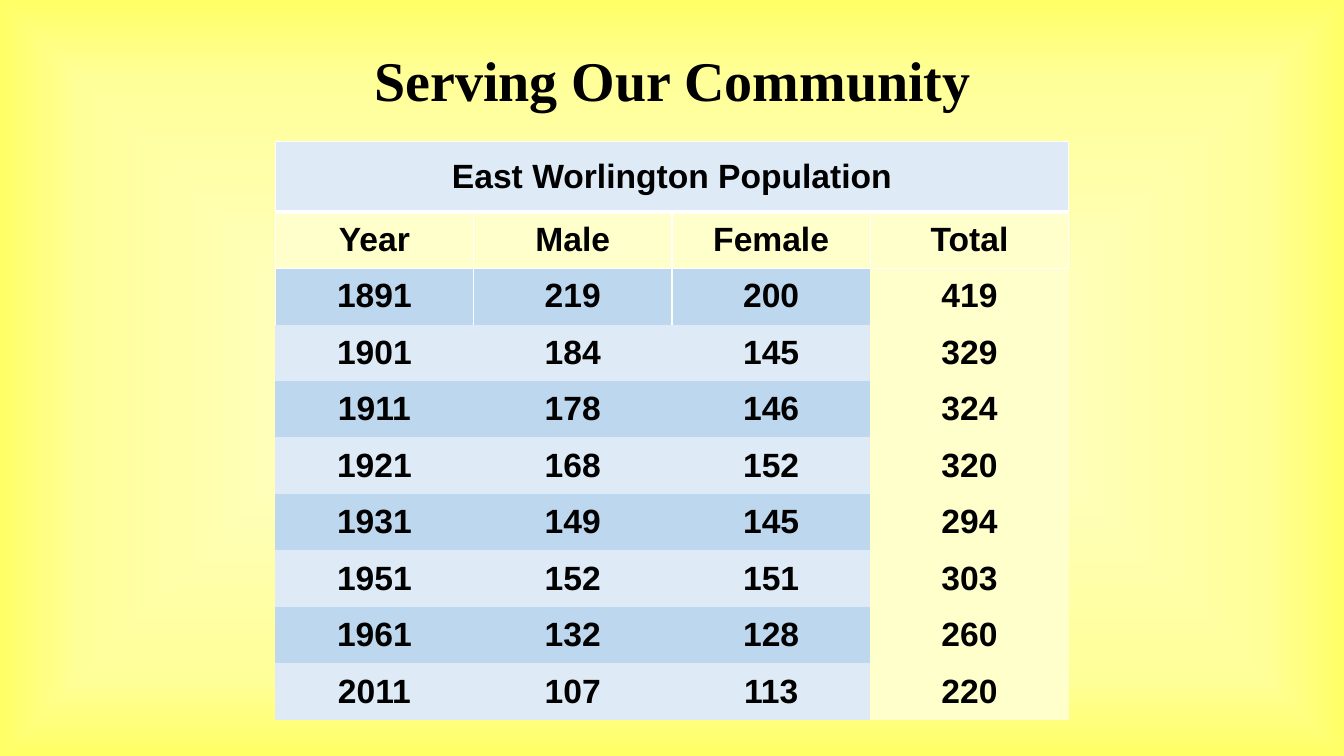
from lxml import etree
from pptx import Presentation
from pptx import util as u
from pptx.dml.color import RGBColor
from pptx.enum import shapes, text
from pptx.oxml import ns

TITLE = "Serving Our Community"
CAPTION = "East Worlington Population"
HEADINGS = ("Year", "Male", "Female", "Total")
POPULATION = [
    (1891, 219, 200),
    (1901, 184, 145),
    (1911, 178, 146),
    (1921, 168, 152),
    (1931, 149, 145),
    (1951, 152, 151),
    (1961, 132, 128),
    (2011, 107, 113),
]
COLOURS = {
    "text": "000000",
    "border": "FFFFFF",
    "cream": "FFFFCC",
    "pale": "DEEBF7",
    "blue": "BDD7EE",
    "lemon": "FFFF99",
    "yellow": "FFFF66",
}
BACKGROUND_STOPS = [(0, "cream"), (79, "lemon"), (100, "yellow")]
CAPTION_HEIGHT, ROW_HEIGHT = 0.7, 0.56
TABLE_LEFT, TABLE_TOP, TABLE_WIDTH = 2.73, 1.4, 7.87
NO_TABLE_STYLE = "{2D5ABB26-0587-4C30-8999-92F81FD0307C}"


def add_child(parent, tag, **attributes):
    return etree.SubElement(parent, ns.qn(tag), attributes)


def paint_background(slide):
    slide.background.fill.gradient()
    gradient = slide.element.find(".//" + ns.qn("a:gradFill"))
    for child in list(gradient):
        gradient.remove(child)
    stops = add_child(gradient, "a:gsLst")
    for percent, colour in BACKGROUND_STOPS:
        stop = add_child(stops, "a:gs", pos=str(percent * 1000))
        add_child(stop, "a:srgbClr", val=COLOURS[colour])
    shade = add_child(gradient, "a:path", path="shape")
    add_child(shade, "a:fillToRect", l="50000", t="50000", r="50000", b="50000")


def write(frame, words, font_name, size):
    frame.text = words
    paragraph = frame.paragraphs[0]
    paragraph.alignment = text.PP_ALIGN.CENTER
    font = paragraph.runs[0].font
    font.name, font.size, font.bold = font_name, u.Pt(size), True
    font.color.rgb = RGBColor.from_string(COLOURS["text"])


def border_widths(row, column):
    if row == 0:
        return {"L": 1, "R": 1, "T": 1, "B": 3}
    if row == 1:
        return {"L": 1, "R": 1, "T": 3, "B": 1}
    if row == 2:
        return {"L": int(column < 3), "R": int(column < 2), "T": 1, "B": 0}
    return dict.fromkeys("LRTB", 0)


def draw_borders(cell, widths):
    properties = cell._tc.get_or_add_tcPr()
    for side, points in widths.items():
        line = add_child(properties, "a:ln" + side, w=str(u.Pt(points)))
        if points:
            fill = add_child(line, "a:solidFill")
            add_child(fill, "a:srgbClr", val=COLOURS["border"])
        else:
            add_child(line, "a:noFill")


def cell_colour(row, column):
    if row == 0:
        return "pale"
    if row == 1 or column == 3:
        return "cream"
    return "pale" if row % 2 else "blue"


def add_population_table(slide):
    rows = [(CAPTION, "", "", ""), HEADINGS]
    rows += [(year, male, female, male + female) for year, male, female in POPULATION]
    height = CAPTION_HEIGHT + ROW_HEIGHT * (len(rows) - 1)
    frame = slide.shapes.add_table(
        len(rows), len(HEADINGS), u.Inches(TABLE_LEFT), u.Inches(TABLE_TOP),
        u.Inches(TABLE_WIDTH), u.Inches(height))
    table = frame.table
    table.first_row = table.horz_banding = False
    frame.element.find(".//" + ns.qn("a:tableStyleId")).text = NO_TABLE_STYLE
    for row, values in enumerate(rows):
        table.rows[row].height = u.Inches(ROW_HEIGHT if row else CAPTION_HEIGHT)
        for column, value in enumerate(values):
            cell = table.cell(row, column)
            draw_borders(cell, border_widths(row, column))
            cell.fill.solid()
            cell.fill.fore_color.rgb = RGBColor.from_string(COLOURS[cell_colour(row, column)])
            cell.vertical_anchor = text.MSO_ANCHOR.MIDDLE
            cell.margin_left = cell.margin_right = u.Inches(0.17 if row else 0.1)
            cell.margin_top = cell.margin_bottom = u.Inches(0 if row else 0.05)
            if value:
                write(cell.text_frame, str(value), "Arial", 24)
    table.cell(0, 0).merge(table.cell(0, len(HEADINGS) - 1))


def add_title(slide):
    shape = slide.shapes.add_shape(
        shapes.MSO_SHAPE.ROUNDED_RECTANGLE,
        u.Inches(3.52), u.Inches(0.36), u.Inches(6.3), u.Inches(0.86))
    shape.shadow.inherit = False
    shape.fill.background()
    shape.line.fill.background()
    frame = shape.text_frame
    frame.word_wrap = True
    frame.auto_size = text.MSO_AUTO_SIZE.SHAPE_TO_FIT_TEXT
    write(frame, TITLE, "Times New Roman", 40)


def main():
    presentation = Presentation()
    presentation.slide_width = u.Inches(13.33)
    presentation.slide_height = u.Inches(7.5)
    slide = presentation.slides.add_slide(presentation.slide_layouts[6])
    paint_background(slide)
    add_population_table(slide)
    add_title(slide)
    presentation.save("out.pptx")


if __name__ == "__main__":
    main()
